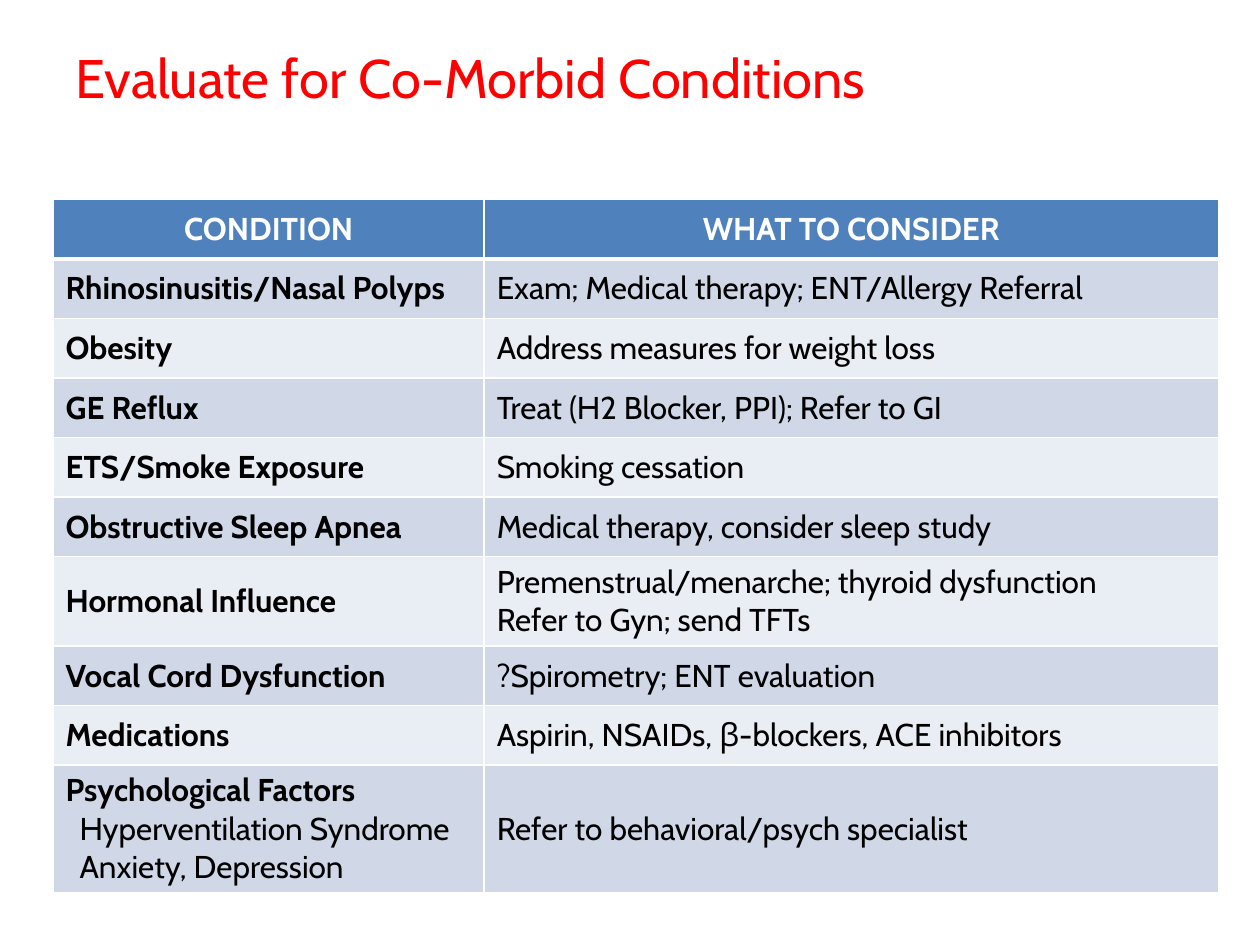
from dataclasses import dataclass

from lxml.etree import SubElement
from pptx import Presentation
from pptx.dml.color import RGBColor as RGB
from pptx.enum.text import MSO_ANCHOR as Anchor, PP_ALIGN as Align
from pptx.oxml.ns import qn
from pptx.util import Cm, Pt


@dataclass(frozen=True)
class Theme:
    font: str = "Cabin"
    title_size: int = 31
    table_size: int = 18
    title: str = "FF0000"
    header: str = "4F81BD"
    bands: tuple = ("D0D8E8", "E9EDF4")
    text: str = "000000"
    light: str = "FFFFFF"
    thin: int = 1
    thick: int = 3


@dataclass(frozen=True)
class Condition:
    name: str
    advice: tuple
    details: tuple = ()


THEME = Theme()
HEADINGS = ("CONDITION", "WHAT TO CONSIDER")
COLUMN_WIDTHS = (Cm(8.69), Cm(14.8))
ROW_HEIGHT = Cm(1.2)
DETAIL_INDENT = Cm(0.28)
CONDITIONS = (
    Condition("Rhinosinusitis/Nasal Polyps", ("Exam; Medical therapy; ENT/Allergy Referral",)),
    Condition("Obesity", ("Address measures for weight loss",)),
    Condition("GE Reflux", ("Treat (H2 Blocker, PPI); Refer to GI",)),
    Condition("ETS/Smoke Exposure", ("Smoking cessation",)),
    Condition("Obstructive Sleep Apnea", ("Medical therapy, consider sleep study",)),
    Condition("Hormonal Influence",
              ("Premenstrual/menarche; thyroid dysfunction", "Refer to Gyn; send TFTs")),
    Condition("Vocal Cord Dysfunction", ("?Spirometry; ENT evaluation",)),
    Condition("Medications", ("Aspirin, NSAIDs, β-blockers, ACE inhibitors",)),
    Condition("Psychological Factors", ("Refer to behavioral/psych specialist",),
              ("Hyperventilation Syndrome", "Anxiety, Depression")),
)


def apply(target, values: dict) -> None:
    for name, value in values.items():
        setattr(target, name, value)


def write(p, text: str, size: int, color: str, bold: bool = False) -> None:
    r = p.add_run()
    r.text = text
    apply(r.font, {"name": THEME.font, "size": Pt(size), "bold": bold})
    r.font.color.rgb = RGB.from_string(color)


def add_title(s, text: str) -> None:
    sp = s.shapes.title
    apply(sp, {"left": Cm(1.27), "top": Cm(0.76), "width": Cm(22.86), "height": Cm(3.18)})
    tf = sp.text_frame
    apply(tf, {"word_wrap": True, "vertical_anchor": Anchor.TOP})
    p = tf.paragraphs[0]
    p.alignment = Align.LEFT
    write(p, text, THEME.title_size, THEME.title)


def style_cell(cell, fill: str, top: int, bottom: int) -> None:
    cell.vertical_anchor = Anchor.MIDDLE
    tc_pr = cell._tc.get_or_add_tcPr()
    widths = {"lnL": THEME.thin, "lnR": THEME.thin, "lnT": top, "lnB": bottom}
    for side, width in widths.items():
        ln = SubElement(tc_pr, qn(f"a:{side}"), w=str(Pt(width)))
        SubElement(SubElement(ln, qn("a:solidFill")), qn("a:srgbClr"), val=THEME.light)
    cell.fill.solid()
    cell.fill.fore_color.rgb = RGB.from_string(fill)


def next_paragraph(tf, index: int):
    return tf.add_paragraph() if index else tf.paragraphs[0]


def add_header(table) -> None:
    for cell, text in zip(table.rows[0].cells, HEADINGS):
        style_cell(cell, THEME.header, THEME.thin, THEME.thick)
        p = cell.text_frame.paragraphs[0]
        p.alignment = Align.CENTER
        write(p, text, THEME.table_size, THEME.light, bold=True)


def add_condition(table, row: int, condition: Condition) -> None:
    name_cell, advice_cell = table.rows[row].cells
    fill = THEME.bands[(row - 1) % 2]
    top = THEME.thick if row == 1 else THEME.thin
    for cell in (name_cell, advice_cell):
        style_cell(cell, fill, top, THEME.thin)
    for i, text in enumerate((condition.name, *condition.details)):
        p = next_paragraph(name_cell.text_frame, i)
        if i:
            p._p.get_or_add_pPr().set("marL", str(DETAIL_INDENT))
        write(p, text, THEME.table_size, THEME.text, bold=i == 0)
    for i, text in enumerate(condition.advice):
        p = next_paragraph(advice_cell.text_frame, i)
        write(p, text, THEME.table_size, THEME.text)


def add_conditions_table(s) -> None:
    count = len(CONDITIONS) + 1
    table = s.shapes.add_table(count, len(HEADINGS), Cm(1.07), Cm(4.02),
                               sum(COLUMN_WIDTHS), ROW_HEIGHT * count).table
    table.horz_banding = False
    for column, width in zip(table.columns, COLUMN_WIDTHS):
        column.width = width
    for row in table.rows:
        row.height = ROW_HEIGHT
    add_header(table)
    for row, condition in enumerate(CONDITIONS, start=1):
        add_condition(table, row, condition)


def main() -> None:
    prs = Presentation()
    apply(prs, {"slide_width": Cm(25.4), "slide_height": Cm(19.05)})
    s = prs.slides.add_slide(prs.slide_layouts[5])
    add_title(s, "Evaluate for Co-Morbid Conditions")
    add_conditions_table(s)
    prs.save("out.pptx")


if __name__ == "__main__":
    main()
